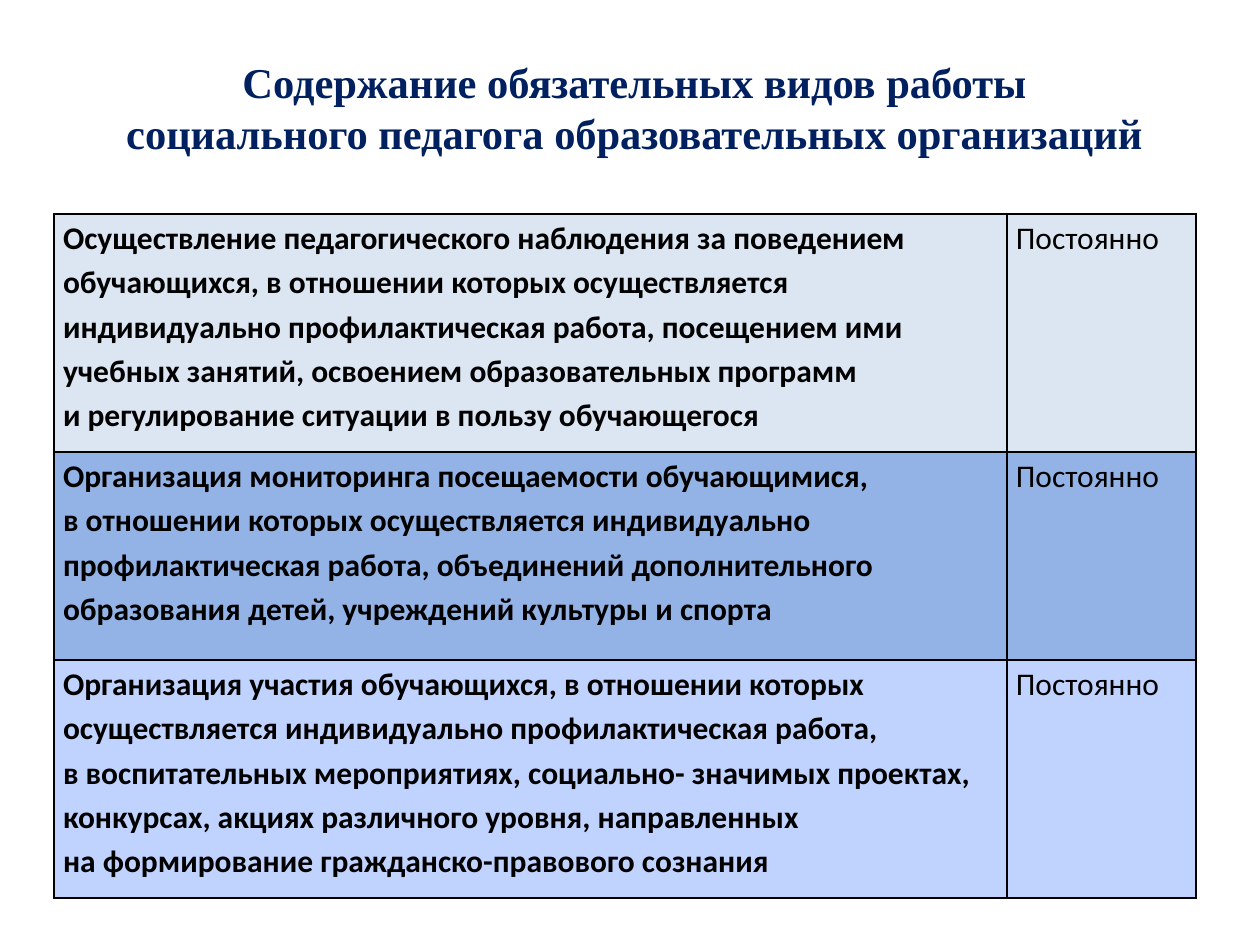
from dataclasses import dataclass

from lxml import etree
from pptx import Presentation, util as u
from pptx.dml.color import RGBColor
from pptx.enum import text as t
from pptx.oxml import ns

PX = u.Inches(1) // 126


@dataclass(frozen=True)
class Theme:
    navy: str = "002060"
    ink: str = "000000"
    pale: str = "DCE6F2"
    blue: str = "93B2E5"
    light: str = "C0D3FF"
    head: str = "Times New Roman"
    body: str = "Calibri"
    big: float = 24.3
    small: float = 18


@dataclass(frozen=True)
class Task:
    text: str
    term: str
    fill: str
    high: int


TH = Theme()
HEAD = "Содержание обязательных видов работы\vсоциального педагога образовательных организаций"
COLS = (953, 189)
TASKS = (
    Task("Осуществление педагогического наблюдения за поведением обучающихся, "
         "в отношении которых осуществляется индивидуально профилактическая работа, "
         "посещением ими учебных занятий, освоением образовательных программ\v"
         "и регулирование ситуации в пользу обучающегося",
         "Постоянно", TH.pale, 238),
    Task("Организация мониторинга посещаемости обучающимися,\v"
         "в отношении которых осуществляется индивидуально профилактическая работа, "
         "объединений дополнительного образования детей, учреждений культуры и спорта",
         "Постоянно", TH.blue, 208),
    Task("Организация участия обучающихся, в отношении которых осуществляется "
         "индивидуально профилактическая работа,\vв воспитательных мероприятиях, "
         "социально- значимых проектах, конкурсах, акциях различного уровня, направленных\v"
         "на формирование гражданско-правового сознания",
         "Постоянно", TH.light, 238),
)


def px(n: int) -> int:
    return n * PX


def style(frame, face: str, size: float, color: str, bold: bool) -> None:
    for para in frame.paragraphs:
        for run in para.runs:
            font = run.font
            font.name, font.size, font.bold = face, u.Pt(size), bold
            font.color.rgb = RGBColor.from_string(color)


def border(cell) -> None:
    props = cell._tc.get_or_add_tcPr()
    for i, side in enumerate(("lnL", "lnR", "lnT", "lnB")):
        line = etree.Element(ns.qn(f"a:{side}"), w=str(u.Pt(1)))
        fill = etree.SubElement(line, ns.qn("a:solidFill"))
        etree.SubElement(fill, ns.qn("a:srgbClr"), val=TH.ink)
        props.insert(i, line)


def put_cell(cell, words: str, fill: str, bold: bool) -> None:
    cell.margin_left = cell.margin_right = px(9)
    cell.margin_top = cell.margin_bottom = 0
    cell.fill.solid()
    cell.fill.fore_color.rgb = RGBColor.from_string(fill)
    frame = cell.text_frame
    frame.text = words
    frame.paragraphs[0].line_spacing = 1.15
    style(frame, TH.body, TH.small, TH.ink, bold)
    border(cell)


def put_head(slide) -> None:
    box = slide.shapes.add_textbox(px(63), px(28), px(1143), px(157))
    frame = box.text_frame
    frame.word_wrap = True
    frame.vertical_anchor = t.MSO_ANCHOR.MIDDLE
    frame.text = HEAD
    frame.paragraphs[0].alignment = t.PP_ALIGN.CENTER
    style(frame, TH.head, TH.big, TH.navy, True)


def put_tasks(slide) -> None:
    high = sum(task.high for task in TASKS)
    table = slide.shapes.add_table(len(TASKS), len(COLS), px(54), px(214),
                                   px(sum(COLS)), px(high)).table
    table.first_row = table.horz_banding = False
    for col, wide in zip(table.columns, COLS):
        col.width = px(wide)
    for row, task in zip(table.rows, TASKS):
        row.height = px(task.high)
        put_cell(row.cells[0], task.text, task.fill, True)
        put_cell(row.cells[1], task.term, task.fill, False)


def main() -> None:
    deck = Presentation()
    deck.slide_width, deck.slide_height = px(1260), px(945)
    slide = deck.slides.add_slide(deck.slide_layouts[6])
    put_head(slide)
    put_tasks(slide)
    deck.save("out.pptx")


if __name__ == "__main__":
    main()
